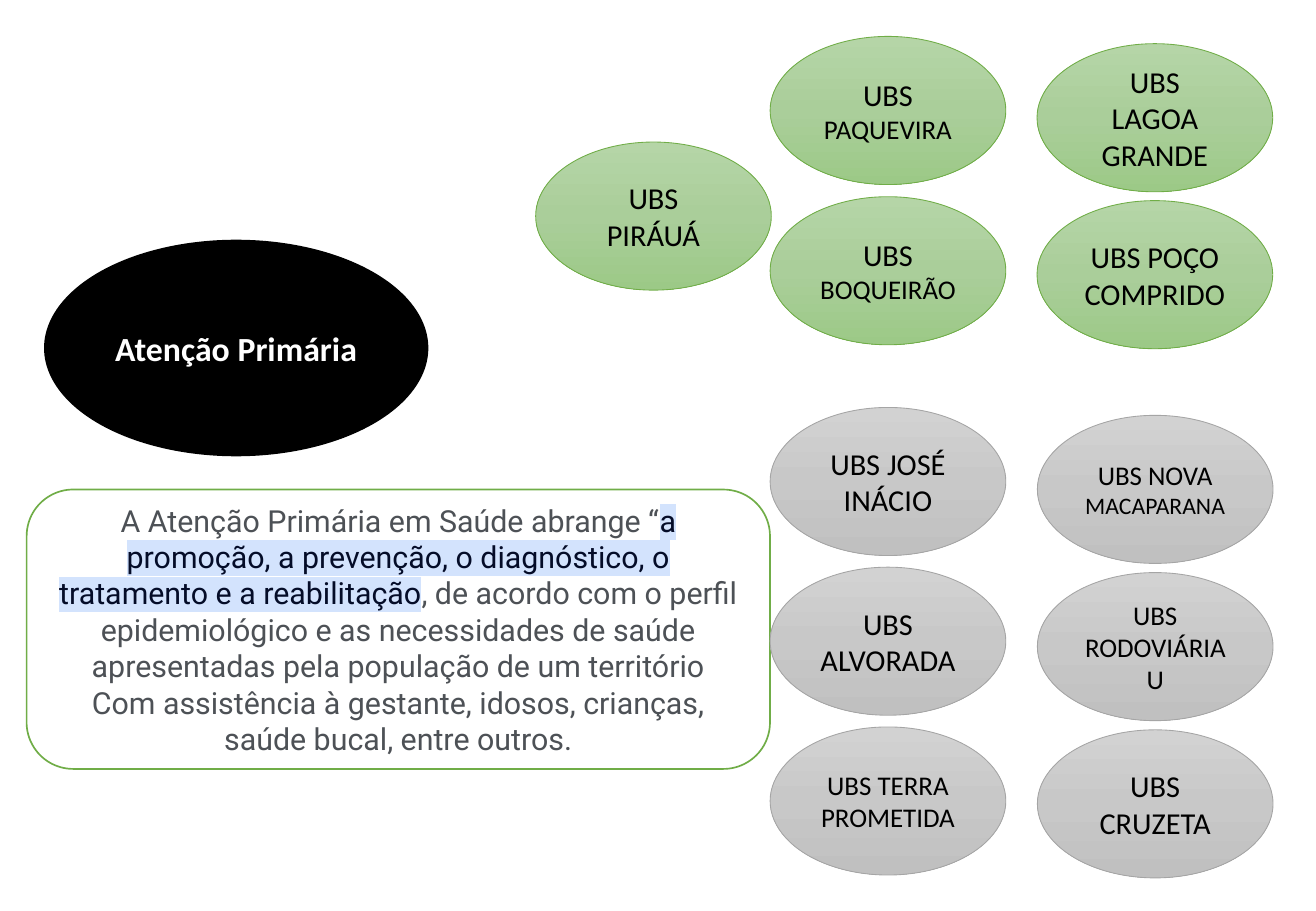
from copy import deepcopy
from lxml.etree import SubElement
from pptx import Presentation
from pptx.dml.color import RGBColor
from pptx.enum.shapes import MSO_SHAPE
from pptx.enum.text import MSO_ANCHOR, PP_ALIGN
from pptx.oxml.ns import qn
from pptx.util import Pt

COLORS = {
    "white": "FFFFFF", "black": "000000", "green": "70AD47", "gray": "A5A5A5",
    "body": "4D5156", "marked": "040C28", "marker": "D3E3FD",
}
GRADIENTS = {
    "green": ("B5D5A7", "AACE9A", "9CC987"),
    "gray": ("D2D2D2", "C8C8C8", "C0C0C0"),
}
DEFINITION = [
    [("A Atenção Primária em Saúde abrange “", "body", None),
     ("a promoção, a prevenção, o diagnóstico, o tratamento e a reabilitação", "marked", "marker"),
     (", de acordo com o perfil epidemiológico e as necessidades de saúde "
      "apresentadas pela população de um território", "body", None)],
    [("Com assistência à gestante, idosos, crianças, saúde bucal, entre outros.", "body", None)],
]
UNIT_COLUMNS = [
    ("green", 317.5, 84.2, 0, [[("UBS PIRÁUÁ", 18)]]),
    ("green", 456.5, 21.6, 95, [
        [("UBS ", 18), ("PAQUEVIRA", 16)],
        [("UBS ", 18), ("BOQUEIRÃO", 16)]]),
    ("green", 614.7, 25.9, 93, [
        [("UBS LAGOA GRANDE", 18)],
        [("UBS POÇO COMPRIDO", 18)]]),
    ("gray", 456.5, 241.5, 94.7, [
        [("UBS JOSÉ INÁCIO", 18)],
        [("UBS ALVORADA", 18)],
        [("UBS TERRA PROMETIDA", 16)]]),
    ("gray", 614.9, 246.2, 93.2, [
        [("UBS NOVA ", 16), ("MACAPARANA", 14)],
        [("UBS RODOVIÁRIAU", 16)],
        [("UBS CRUZETA", 18)]]),
]
UNIT_SIZE = (139.7, 87.8)


def color(name):
    return RGBColor.from_string(COLORS[name])


def add_box(page, kind, place, line, weight, fill=None):
    box = page.shapes.add_shape(kind, *[Pt(value) for value in place])
    box.shadow.inherit = False
    box.line.color.rgb = color(line)
    box.line.width = Pt(weight)
    if fill:
        box.fill.solid()
        box.fill.fore_color.rgb = color(fill)
    box.text_frame.word_wrap = True
    box.text_frame.vertical_anchor = MSO_ANCHOR.MIDDLE
    box.text_frame.paragraphs[0].alignment = PP_ALIGN.CENTER
    return box


def add_span(para, text, size, ink, font="Calibri", bold=False, marker=None):
    span = para.add_run()
    span.text = text
    span.font.size = Pt(size)
    span.font.bold = bold
    span.font.color.rgb = color(ink)
    if marker:
        highlight = SubElement(span.font._element, qn("a:highlight"))
        SubElement(highlight, qn("a:srgbClr"), val=COLORS[marker])
    span.font.name = font


def shade(box, tones):
    box.fill.gradient()
    box.fill.gradient_angle = 270
    stop_list = next(box._element.iter(qn("a:gsLst")))
    stop_list.insert(1, deepcopy(stop_list[0]))
    for index, (stop, tone) in enumerate(zip(box.fill.gradient_stops, tones)):
        stop.position = index / 2
        stop.color.rgb = RGBColor.from_string(tone)


def add_definition(page):
    place = (15.8, 290.2, 440.6, 165.6)
    box = add_box(page, MSO_SHAPE.ROUNDED_RECTANGLE, place, "green", 1, "white")
    frame = box.text_frame
    for index, spans in enumerate(DEFINITION):
        para = frame.add_paragraph() if index else frame.paragraphs[0]
        para.alignment = PP_ALIGN.CENTER
        for text, ink, marker in spans:
            add_span(para, text, 18, ink, "Roboto", marker=marker)


def add_units(page):
    for tone, left, top, pitch, units in UNIT_COLUMNS:
        for row, spans in enumerate(units):
            place = (left, top + row * pitch, *UNIT_SIZE)
            box = add_box(page, MSO_SHAPE.OVAL, place, tone, 0.5)
            shade(box, GRADIENTS[tone])
            for text, size in spans:
                add_span(box.text_frame.paragraphs[0], text, size, "black")


def main():
    """Build the primary care slide with its health units."""
    deck = Presentation()
    deck.slide_width, deck.slide_height = Pt(780), Pt(540)
    page = deck.slides.add_slide(deck.slide_layouts[6])
    add_definition(page)
    topic = add_box(page, MSO_SHAPE.OVAL, (26.6, 142.6, 226.8, 127.4), "black", 1, "black")
    add_span(topic.text_frame.paragraphs[0], "Atenção Primária", 20, "white", bold=True)
    add_units(page)
    deck.save("out.pptx")


if __name__ == "__main__":
    main()
